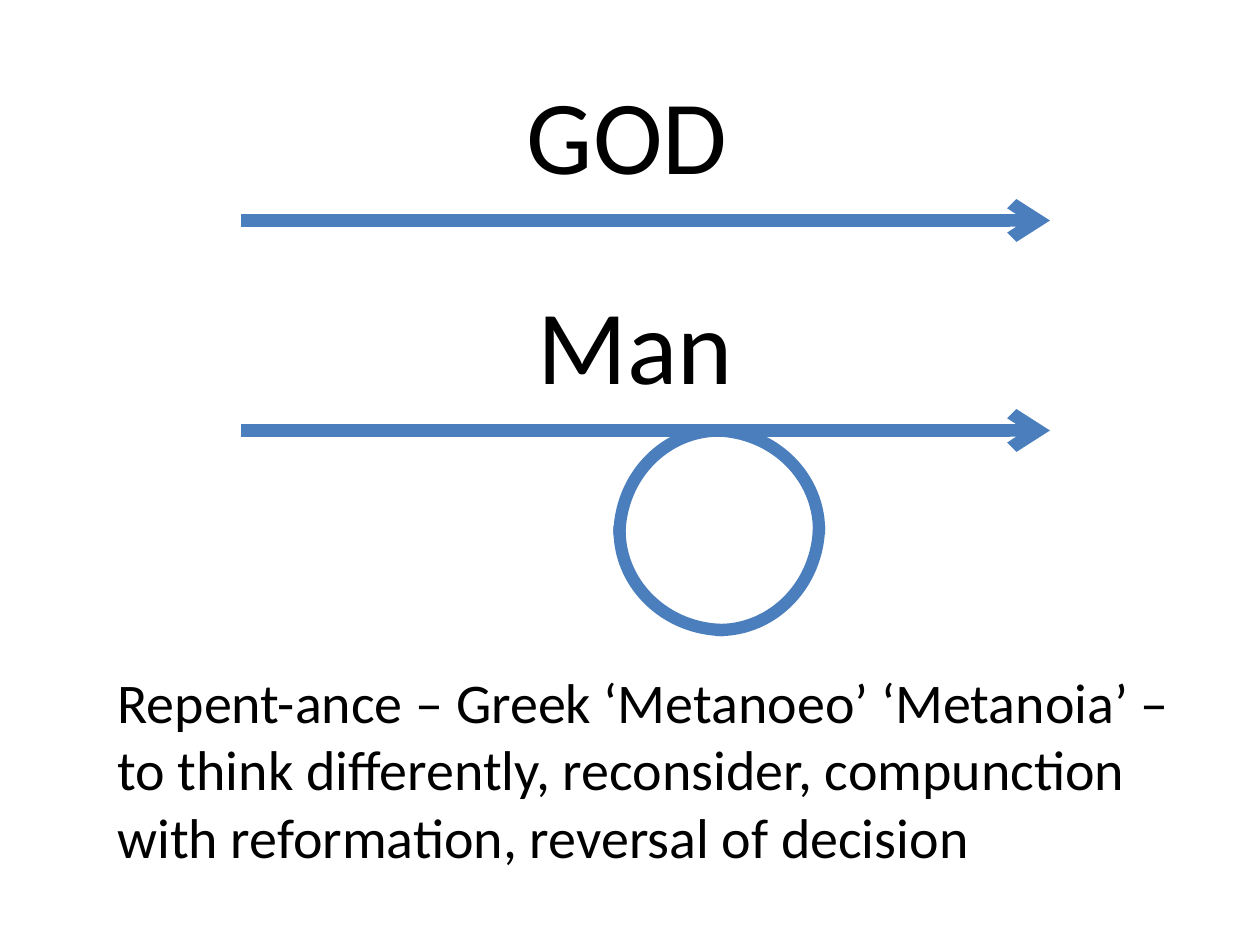
from math import cos, radians, sin

from lxml.etree import SubElement
from pptx import Presentation
from pptx.dml.color import RGBColor
from pptx.enum.shapes import MSO_CONNECTOR, MSO_SHAPE
from pptx.enum.text import MSO_AUTO_SIZE
from pptx.oxml.ns import qn
from pptx.util import Pt

COLORS = {"text": "000000", "path": "4B7EBC"}
PATH_WIDTH = 7


def add_text(slide, box, paragraphs, *, size, wrap=True, font="Calibri", color="text"):
    label = slide.shapes.add_textbox(*map(Pt, box))
    frame = label.text_frame
    frame.word_wrap = wrap
    frame.auto_size = MSO_AUTO_SIZE.SHAPE_TO_FIT_TEXT
    frame.text = "\n".join(paragraphs)
    for paragraph in frame.paragraphs:
        paragraph.font.size = Pt(size)
        paragraph.font.name = font
        paragraph.font.color.rgb = RGBColor.from_string(COLORS[color])


def style_path(line):
    line.color.rgb = RGBColor.from_string(COLORS["path"])
    line.width = Pt(PATH_WIDTH)


def add_arrow(shapes, left, right, y):
    arrow = shapes.add_connector(MSO_CONNECTOR.STRAIGHT, Pt(left), Pt(y), Pt(right), Pt(y))
    style_path(arrow.line)
    SubElement(arrow.line._get_or_add_ln(), qn("a:tailEnd"), type="arrow")
    SubElement(arrow._element.spPr, qn("a:effectLst"))


def add_loop(shapes, box):
    """Four quarter arcs, each shifted a little so that their ends meet."""
    left, top, width, height = box
    shift = 3
    for turn in range(0, 360, 90):
        dx, dy = -shift * cos(radians(turn)), -shift * sin(radians(turn))
        arc = shapes.add_shape(MSO_SHAPE.ARC, Pt(left + dx), Pt(top + dy), Pt(width), Pt(height))
        arc.adjustments[0], arc.adjustments[1] = 162, 1.407  # 270° to about 2°
        arc.rotation = turn
        arc.fill.background()
        arc.shadow.inherit = False
        style_path(arc.line)


def add_god_path(slide, box):
    left, top, width, height = box
    add_arrow(slide.shapes, left, left + width, top + height)
    add_text(slide, (left + 156, top, 130, 80), ["GOD"], size=60, wrap=False)


def add_man_path(slide, box):
    left, top, width, height = box
    add_text(slide, (left + 162, top, 127.5, 80), ["Man"], size=60, wrap=False)
    turning_path = slide.shapes.add_group_shape()
    add_arrow(turning_path.shapes, left, left + width, top + height)
    add_loop(turning_path.shapes, (left + 213, top + height, 120, 114))


def add_definition(slide, box):
    add_text(slide, box, [
        "Repent-ance – Greek ‘Metanoeo’ ‘Metanoia’ –",
        "to think differently, reconsider, compunction with reformation, reversal of decision",
    ], size=32)


def main():
    deck = Presentation()
    deck.slide_width, deck.slide_height = Pt(720), Pt(540)
    slide = deck.slides.add_slide(deck.slide_layouts[6])

    # Two paths, then the meaning of the word
    add_god_path(slide, (138, 36, 462, 90))
    add_man_path(slide, (138, 156, 462, 90))
    add_definition(slide, (60, 378, 636, 124))

    deck.save("out.pptx")


if __name__ == "__main__":
    main()
